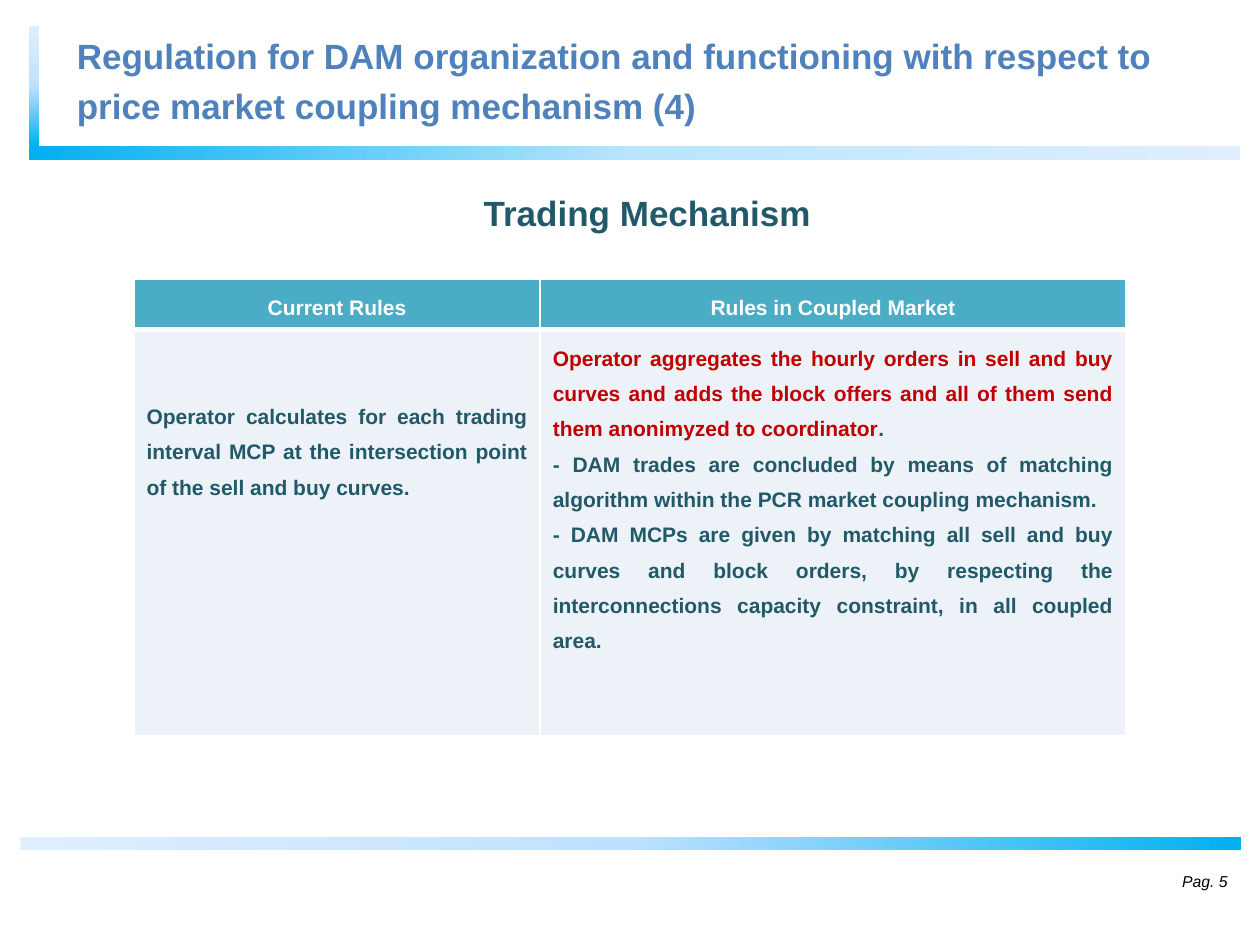
"""Build the slide on trading rules before and after market coupling."""
from copy import deepcopy
from dataclasses import dataclass

from lxml import etree
from pptx import Presentation
from pptx import util as u
from pptx.dml.color import RGBColor
from pptx.enum import shapes, text
from pptx.oxml.ns import qn


@dataclass
class Theme:
    font: str = "Arial"
    title: str = "4F81BD"
    dark: str = "215968"
    red: str = "C00000"
    head: str = "4BACC6"
    body: str = "DCE6F2"
    white: str = "FFFFFF"
    black: str = "000000"
    fade: tuple = ("00B0F0", "BFE1FF", "E0EFFF")
    big: int = 20
    mid: int = 12
    small: int = 9


T = Theme()
rgb = RGBColor.from_string
A = text.PP_ALIGN
M = text.MSO_ANCHOR


def write(frame, paras, size, align, space=1.0, bold=True):
    frame.word_wrap = True
    for i, runs in enumerate(paras):
        para = frame.add_paragraph() if i else frame.paragraphs[0]
        para.alignment = align
        para.line_spacing = space
        for words, color in runs:
            run = para.add_run()
            run.text = words
            run.font.name = T.font
            run.font.size = u.Pt(size)
            run.font.bold = bold
            run.font.italic = not bold
            run.font.color.rgb = rgb(color)


def edge(cell, widths):
    props = cell._tc.get_or_add_tcPr()
    for i, (side, width) in enumerate(zip("LRTB", widths)):
        line = etree.Element(qn(f"a:ln{side}"), w=str(u.Pt(width)))
        fill = etree.SubElement(line, qn("a:solidFill"))
        etree.SubElement(fill, qn("a:srgbClr"), val=T.white)
        props.insert(i, line)


deck = Presentation()
deck.slide_width, deck.slide_height = u.Cm(25.4), u.Cm(19.05)
slide = deck.slides.add_slide(deck.slide_layouts[6])
items = slide.shapes
rect = shapes.MSO_SHAPE.RECTANGLE

bars = [
    ((0.58, 2.95, 24.41, 0.28), 0, (T.fade[0], "B9E5FF", T.fade[2])),
    ((-0.51, 1.63, 2.41, 0.2), 270, T.fade),
    ((0.41, 16.87, 24.61, 0.26), 0, T.fade[::-1]),
]
for box, turn, fade in bars:
    bar = items.add_shape(rect, *map(u.Cm, box))
    bar.shadow.inherit = False
    bar.line.fill.background()
    bar.rotation = turn
    bar.fill.gradient()
    bar.fill.gradient_angle = 0
    stops = bar._element.spPr.find(".//" + qn("a:gsLst"))
    stops.append(deepcopy(stops[0]))
    for i, (stop, color) in enumerate(zip(bar.fill.gradient_stops, fade)):
        stop.color.rgb = rgb(color)
        stop.position = i / 2

page = items.add_textbox(*map(u.Cm, (22.23, 17.25, 2.77, 1.02))).text_frame
page.vertical_anchor = M.MIDDLE
write(page, [[("Pag. 5", T.black)]], T.small, A.RIGHT, bold=False)

topic = items.add_shape(rect, *map(u.Cm, (9.5, 3.73, 7.39, 1.19)))
topic.shadow.inherit = False
topic.fill.solid()
topic.fill.fore_color.rgb = rgb(T.white)
topic.line.fill.background()
topic.text_frame.vertical_anchor = M.TOP
write(topic.text_frame, [[("Trading Mechanism", T.dark)]], T.big, A.LEFT)

rules = [
    [[[("Current Rules", T.white)]], [[("Rules in Coupled Market", T.white)]]],
    [
        [[("Operator calculates for each trading interval MCP at the "
           "intersection point of the sell and buy curves.", T.dark)]],
        [
            [("Operator aggregates the hourly orders in sell and buy curves "
              "and adds the block offers and all of them send them anonimyzed "
              "to coordinator", T.red), (".", T.dark)],
            [("- DAM trades are concluded by means of matching algorithm "
              "within the PCR market coupling mechanism.", T.dark)],
            [("- DAM MCPs are given by matching all sell and buy curves and "
              "block orders, by respecting the interconnections capacity "
              "constraint, in all coupled area.", T.dark)],
        ],
    ],
]
grid = items.add_table(2, 2, *map(u.Cm, (2.7, 5.62, 20.0, 9.14))).table
grid.horz_banding = False
for col, wide in zip(grid.columns, (8.19, 11.81)):
    col.width = u.Cm(wide)
for row, high in zip(grid.rows, (0.94, 8.2)):
    row.height = u.Cm(high)
for r, row in enumerate(rules):
    for c, paras in enumerate(row):
        cell = grid.cell(r, c)
        cell.fill.solid()
        cell.fill.fore_color.rgb = rgb(T.body if r else T.head)
        edge(cell, (1, 1, 1, 1) if r else (1, 1, 1, 3))
        if r:
            tint = cell._tc.tcPr.find(qn("a:solidFill"))[0]
            etree.SubElement(tint, qn("a:alpha"), val="50000")
        write(cell.text_frame, paras, T.mid, A.JUSTIFY if r else A.CENTER, 1.5)
grid.cell(1, 0).margin_top = u.Cm(1.3)

head = items.add_textbox(*map(u.Cm, (1.3, 0.53, 23.6, 2.01))).text_frame
head.vertical_anchor = M.MIDDLE
write(head, [[("Regulation for DAM organization and functioning with respect "
               "to price market coupling mechanism (4)", T.title)]],
      T.big, A.LEFT, 1.2)

deck.save("out.pptx")
